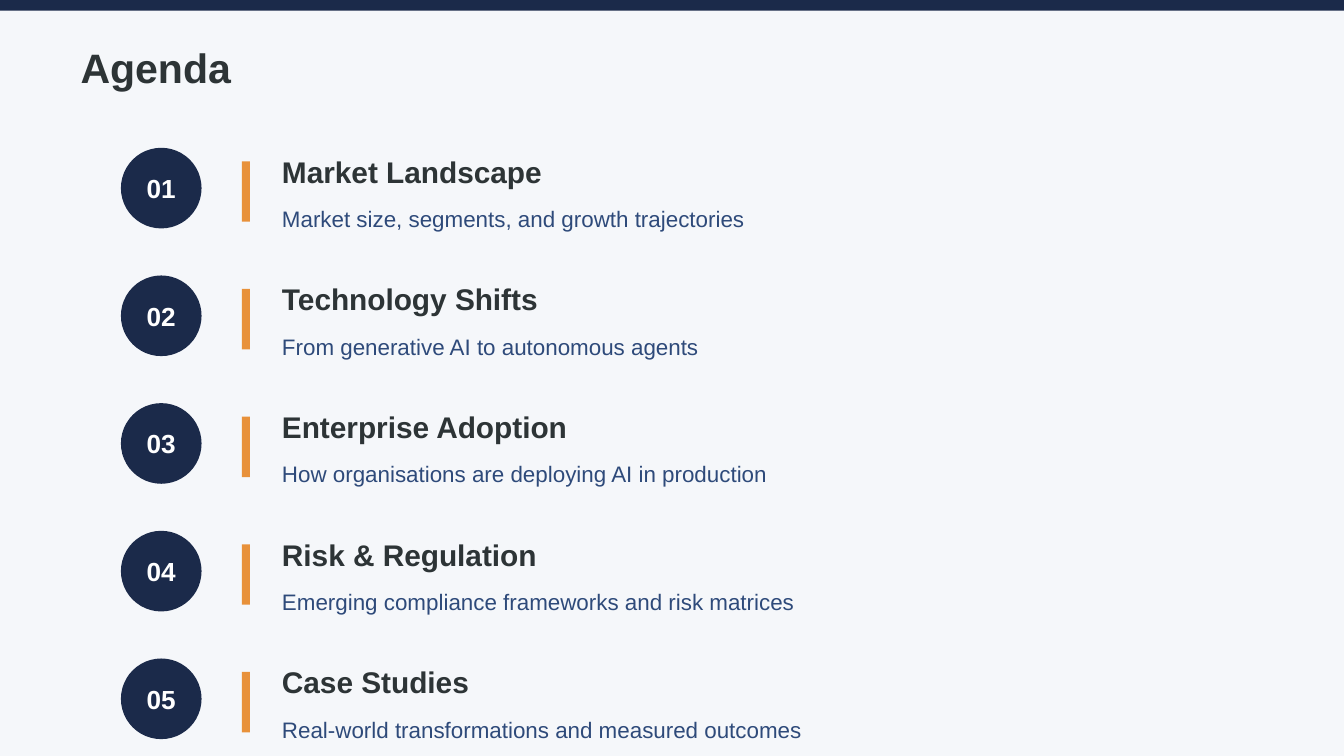
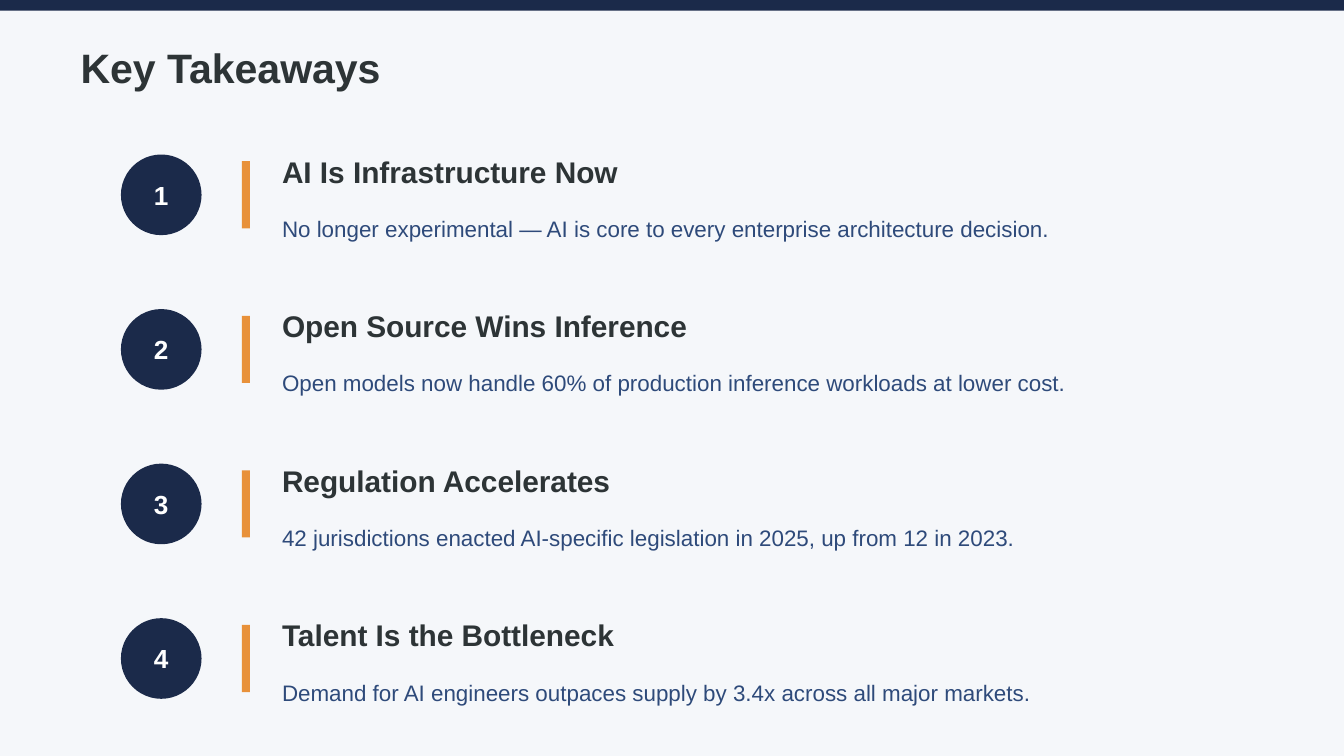
from dataclasses import dataclass

from pptx import Presentation
from pptx.dml.color import RGBColor
from pptx.enum.shapes import MSO_SHAPE as Preset
from pptx.enum.text import MSO_ANCHOR as Anchor, MSO_AUTO_SIZE as AutoSize, PP_ALIGN as Align
from pptx.presentation import Presentation as Deck
from pptx.shapes.autoshape import Shape
from pptx.slide import Slide
from pptx.util import Pt

FONT = "Arial"
COLORS = {
    "background": "F5F7FA",
    "navy": "1B2A4A",
    "orange": "E8913A",
    "heading": "2D3436",
    "detail": "2E4A7A",
    "white": "FFFFFF",
}

# Shared measures, in points
SLIDE_WIDTH, SLIDE_HEIGHT = 720, 405
BAND_WIDTH, BAND_HEIGHT = 960, 5.76
TITLE_BOX = (36, 18, 888, 36)
BADGE_LEFT, BADGE_SIZE = 64.8, 43.2
BAR_LEFT, BAR_WIDTH, BAR_DROP = 129.6, 4.32, 7.2
TEXT_LEFT, HEADING_HEIGHT = 144, 25.2
FIRST_ROW_TOP = 79.2


@dataclass(frozen=True)
class Item:
    heading: str
    detail: str


@dataclass(frozen=True)
class ListStyle:
    pitch: float
    number_format: str
    badge_drop: float
    bar_height: float
    heading_width: float
    detail_width: float
    detail_height: float


AGENDA_STYLE = ListStyle(68.4, "02d", 0, 32.4, 288, 576, 25.2)
TAKEAWAY_STYLE = ListStyle(82.8, "d", 3.6, 36, 780, 780, 36)

AGENDA = [
    Item("Market Landscape", "Market size, segments, and growth trajectories"),
    Item("Technology Shifts", "From generative AI to autonomous agents"),
    Item("Enterprise Adoption", "How organisations are deploying AI in production"),
    Item("Risk & Regulation", "Emerging compliance frameworks and risk matrices"),
    Item("Case Studies", "Real-world transformations and measured outcomes"),
]
TAKEAWAYS = [
    Item("AI Is Infrastructure Now",
         "No longer experimental — AI is core to every enterprise architecture decision."),
    Item("Open Source Wins Inference",
         "Open models now handle 60% of production inference workloads at lower cost."),
    Item("Regulation Accelerates",
         "42 jurisdictions enacted AI-specific legislation in 2025, up from 12 in 2023."),
    Item("Talent Is the Bottleneck",
         "Demand for AI engineers outpaces supply by 3.4x across all major markets."),
]


def rgb(name: str) -> RGBColor:
    return RGBColor.from_string(COLORS[name])


def write_text(box: Shape, text: str, *, size: float, color: str,
               bold: bool = False, align: Align = Align.LEFT) -> None:
    frame = box.text_frame
    frame.word_wrap = True
    frame.auto_size = AutoSize.NONE
    frame.vertical_anchor = Anchor.MIDDLE
    para = frame.paragraphs[0]
    para.alignment = align
    span = para.add_run()
    span.text = text
    span.font.name = FONT
    span.font.size = Pt(size)
    span.font.bold = bold
    span.font.color.rgb = rgb(color)


def add_textbox(page: Slide, left: float, top: float, width: float, height: float) -> Shape:
    return page.shapes.add_textbox(Pt(left), Pt(top), Pt(width), Pt(height))


def add_block(page: Slide, preset: Preset, color: str,
              left: float, top: float, width: float, height: float) -> Shape:
    block = page.shapes.add_shape(preset, Pt(left), Pt(top), Pt(width), Pt(height))
    block.shadow.inherit = False
    block.fill.solid()
    block.fill.fore_color.rgb = rgb(color)
    block.line.fill.background()
    return block


def add_badge(page: Slide, top: float, label: str) -> None:
    badge = add_block(page, Preset.OVAL, "navy", BADGE_LEFT, top, BADGE_SIZE, BADGE_SIZE)
    frame = badge.text_frame
    frame.margin_left = frame.margin_right = frame.margin_top = frame.margin_bottom = 0
    write_text(badge, label, size=14, color="white", bold=True, align=Align.CENTER)


def add_row(page: Slide, top: float, number: int, item: Item, style: ListStyle) -> None:
    add_badge(page, top + style.badge_drop, format(number, style.number_format))
    add_block(page, Preset.RECTANGLE, "orange",
              BAR_LEFT, top + BAR_DROP, BAR_WIDTH, style.bar_height)
    heading = add_textbox(page, TEXT_LEFT, top, style.heading_width, HEADING_HEIGHT)
    write_text(heading, item.heading, size=16, color="heading", bold=True)
    detail = add_textbox(page, TEXT_LEFT, top + HEADING_HEIGHT,
                         style.detail_width, style.detail_height)
    write_text(detail, item.detail, size=12, color="detail")


def add_list_page(deck: Deck, title: str, items: list[Item], style: ListStyle) -> None:
    page = deck.slides.add_slide(deck.slide_layouts.get_by_name("Title Only"))

    # Top band and title
    add_block(page, Preset.RECTANGLE, "navy", 0, 0, BAND_WIDTH, BAND_HEIGHT)
    heading = page.shapes.title
    heading.left, heading.top, heading.width, heading.height = map(Pt, TITLE_BOX)
    write_text(heading, title, size=22, color="heading", bold=True)

    # Numbered rows
    for index, item in enumerate(items):
        add_row(page, FIRST_ROW_TOP + index * style.pitch, index + 1, item, style)


def main() -> None:
    deck = Presentation()
    deck.slide_width, deck.slide_height = Pt(SLIDE_WIDTH), Pt(SLIDE_HEIGHT)
    backdrop = deck.slide_master.background.fill
    backdrop.solid()
    backdrop.fore_color.rgb = rgb("background")

    add_list_page(deck, "Agenda", AGENDA, AGENDA_STYLE)
    add_list_page(deck, "Key Takeaways", TAKEAWAYS, TAKEAWAY_STYLE)
    deck.save("out.pptx")


if __name__ == "__main__":
    main()
